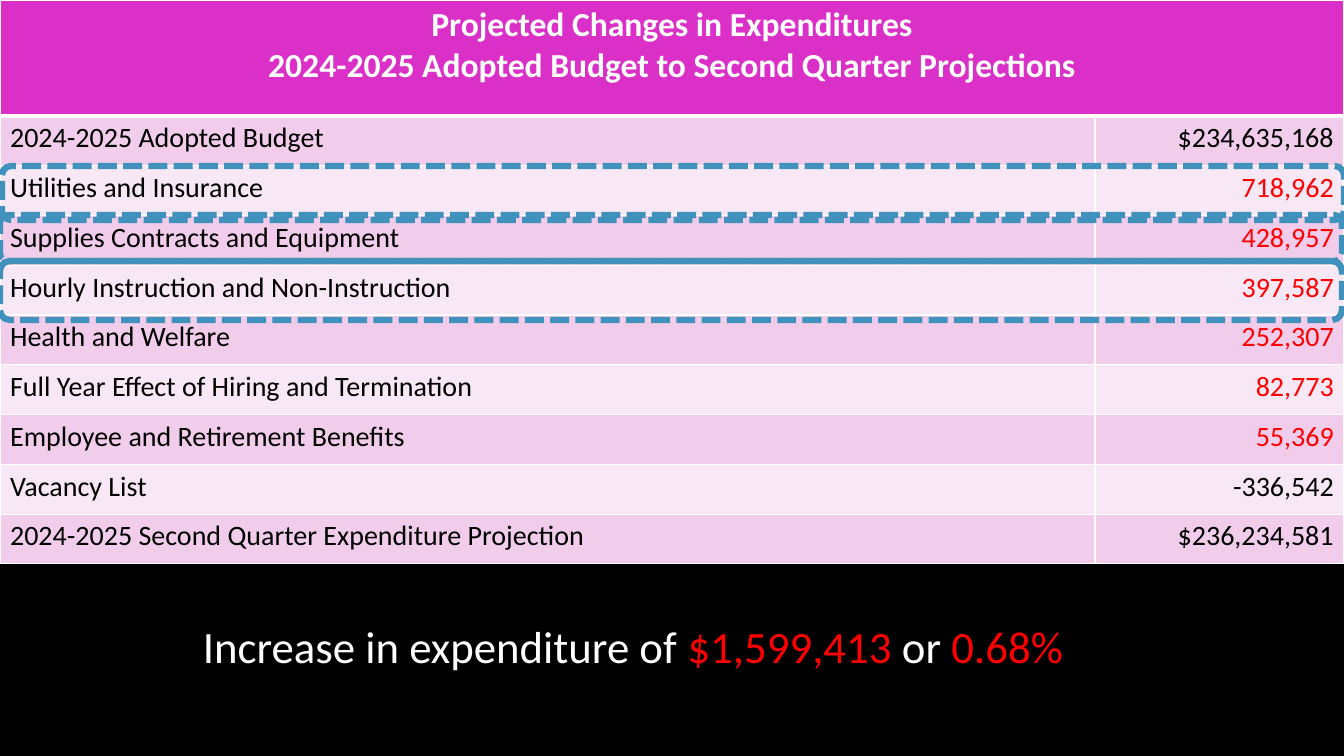
from pptx import Presentation
from pptx.dml.color import RGBColor
from pptx.enum.dml import MSO_LINE
from pptx.enum.shapes import MSO_SHAPE
from pptx.enum.text import PP_ALIGN
from pptx.oxml import parse_xml
from pptx.oxml.ns import nsdecls
from pptx.util import Pt

PX = 914400 / 100.8
HEADER_HEIGHT = 116
TABLE_HEIGHT = 564
LABEL_WIDTH = 1095
SLIDE_WIDTH, SLIDE_HEIGHT = 1344, 756


def px(*lengths):
    return [round(length * PX) for length in lengths]


def color(value):
    return RGBColor.from_string(value)


presentation = Presentation()
presentation.slide_width, presentation.slide_height = px(SLIDE_WIDTH, SLIDE_HEIGHT)
slide = presentation.slides.add_slide(presentation.slide_layouts[6])
slide.background.fill.solid()
slide.background.fill.fore_color.rgb = color("000000")

header = "Projected Changes in Expenditures\n2024-2025 Adopted Budget to Second Quarter Projections"
budget_rows = [
    ("2024-2025 Adopted Budget", "$234,635,168", "000000"),
    ("Utilities and Insurance", "718,962", "FF0000"),
    ("Supplies Contracts and Equipment", "428,957", "FF0000"),
    ("Hourly Instruction and Non-Instruction", "397,587", "FF0000"),
    ("Health and Welfare", "252,307", "FF0000"),
    ("Full Year Effect of Hiring and Termination", "82,773", "FF0000"),
    ("Employee and Retirement Benefits", "55,369", "FF0000"),
    ("Vacancy List", "-336,542", "000000"),
    ("2024-2025 Second Quarter Expenditure Projection", "$236,234,581", "000000"),
]

table = slide.shapes.add_table(
    len(budget_rows) + 1, 2, *px(0, 0, SLIDE_WIDTH, TABLE_HEIGHT)
).table
table.columns[0].width, table.columns[1].width = px(LABEL_WIDTH, SLIDE_WIDTH - LABEL_WIDTH)
row_height = (TABLE_HEIGHT - HEADER_HEIGHT) / len(budget_rows)
table.cell(0, 0).merge(table.cell(0, 1))

for row_index, (label, amount, amount_color) in enumerate([(header, "", "FFFFFF")] + budget_rows):
    is_header = row_index == 0
    table.rows[row_index].height = px(HEADER_HEIGHT if is_header else row_height)[0]
    row_fill = "DB30C7" if is_header else ("F8E8F5", "F1CDEB")[row_index % 2]
    label_color = "FFFFFF" if is_header else "000000"
    label_alignment = PP_ALIGN.CENTER if is_header else PP_ALIGN.LEFT
    cell_contents = [
        (label, label_color, label_alignment),
        (amount, amount_color, PP_ALIGN.RIGHT),
    ]
    for column_index, (text, text_color, alignment) in enumerate(cell_contents):
        cell = table.cell(row_index, column_index)
        cell.text = text
        for paragraph in cell.text_frame.paragraphs:
            paragraph.alignment = alignment
            paragraph.font.name = "Calibri"
            paragraph.font.size = Pt(24 if is_header else 20)
            paragraph.font.bold = is_header
            paragraph.font.color.rgb = color(text_color)
        cell_properties = cell._tc.get_or_add_tcPr()
        for side in "LRTB":
            thick = (row_index, side) in [(0, "B"), (1, "T")]
            cell_properties.append(parse_xml(
                f'<a:ln{side} {nsdecls("a")} w="{Pt(3 if thick else 1)}"><a:solidFill>'
                f'<a:srgbClr val="FFFFFF"/></a:solidFill></a:ln{side}>'
            ))
        cell.fill.solid()
        cell.fill.fore_color.rgb = color(row_fill)

for left, top, height in [(2, 166, 54), (0, 261, 59), (0, 215, 46)]:
    highlight = slide.shapes.add_shape(
        MSO_SHAPE.ROUNDED_RECTANGLE, *px(left, top, 1342, height)
    )
    highlight.shadow.inherit = False
    highlight.fill.background()
    highlight.line.color.rgb = color("4092BD")
    highlight.line.width = Pt(4.5)
    highlight.line.dash_style = MSO_LINE.SQUARE_DOT

summary = slide.shapes.add_textbox(*px(193, 614, 915, 64))
summary.text_frame.word_wrap = True
paragraph = summary.text_frame.paragraphs[0]
paragraph.font.name = "Calibri"
paragraph.font.size = Pt(32)
for text, text_color in [
    ("Increase in expenditure of ", "FFFFFF"),
    ("$1,599,413 ", "FF0000"),
    ("or ", "FFFFFF"),
    ("0.68%", "FF0000"),
]:
    run = paragraph.add_run()
    run.text = text
    run.font.color.rgb = color(text_color)

presentation.save("out.pptx")
